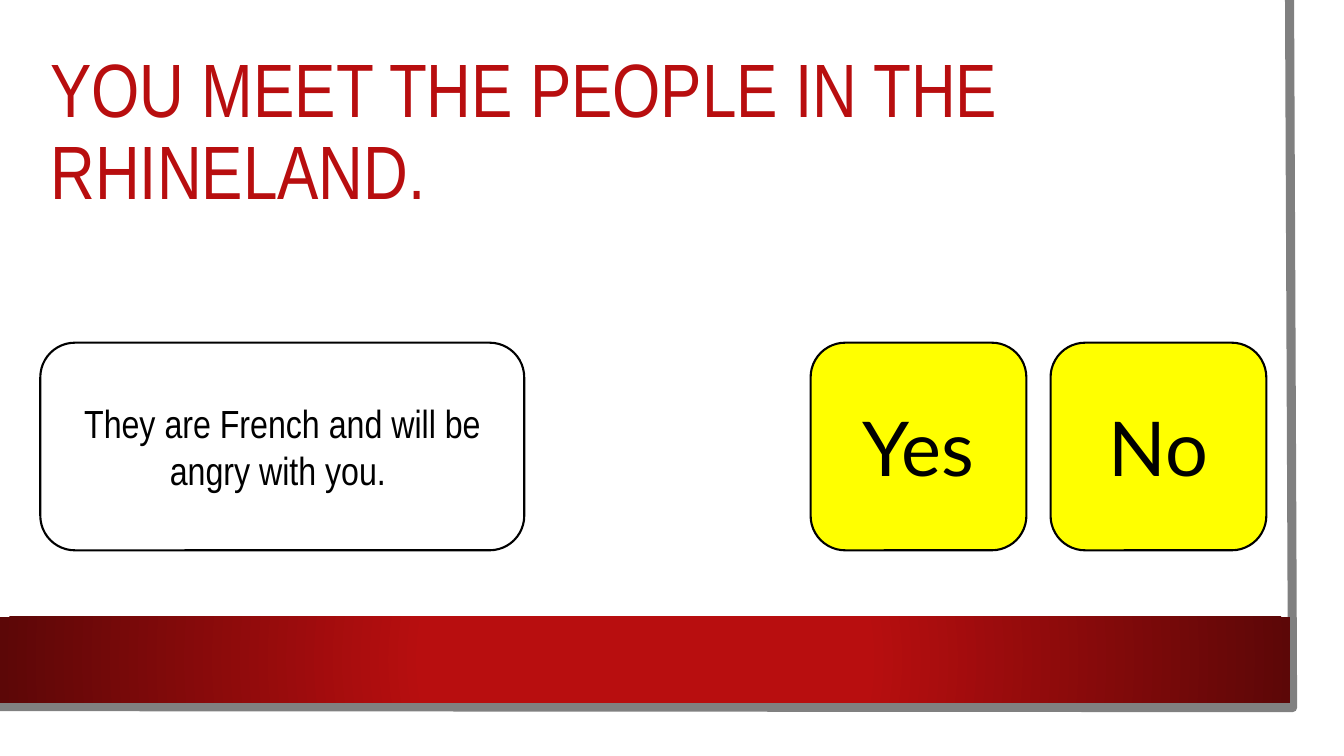
import pptx
import pptx.dml.color
import pptx.enum.dml
import pptx.enum.shapes
import pptx.enum.text
import pptx.util
from lxml import etree
from pptx.oxml.ns import qn

Inches, Pt = pptx.util.Inches, pptx.util.Pt
RGB = pptx.dml.color.RGBColor.from_string
SHAPE = pptx.enum.shapes.MSO_SHAPE
ALIGN = pptx.enum.text.PP_ALIGN
MIDDLE = pptx.enum.text.MSO_ANCHOR.MIDDLE

THEME = {
    "red": "B80E0F", "dark_red": "5C0707", "grey": "808080",
    "white": "FFFFFF", "yellow": "FFFF00", "black": "000000",
    "narrow": "Arial Narrow", "button": "Lato", "large": 54, "body": 28,
}

TITLE = "YOU MEET THE PEOPLE IN THE RHINELAND."
CARD_TOP, CARD_HEIGHT = 3.4, 2.06
# text, left, width, fill, font, size
CARDS = [
    ("They are French and will be angry with you. ", 0.4, 4.8, "white", "narrow", "body"),
    ("Yes", 8.04, 2.14, "yellow", "button", "large"),
    ("No", 10.42, 2.14, "yellow", "button", "large"),
]
PAGE_EDGE = [(12.79, 0), (12.82, 7.02), (-0.03, 7.01)]
BAND = (0, 6.12, 12.8, 0.85)


def format_text(sp, align, color, font, size):
    tf = sp.text_frame
    tf.word_wrap = True
    tf.auto_size = pptx.enum.text.MSO_AUTO_SIZE.NONE
    tf.vertical_anchor = MIDDLE
    p = tf.paragraphs[0]
    p.alignment = align
    for r in p.runs:
        r.font.name = THEME[font]
        r.font.size = Pt(THEME[size])
        r.font.color.rgb = RGB(THEME[color])
    return p


def add_page_edge(slide):
    points = [(Inches(x), Inches(y)) for x, y in PAGE_EDGE]
    builder = slide.shapes.build_freeform(*points[0], scale=1.0)
    builder.add_line_segments(points[1:], close=False)
    sp = builder.convert_to_shape()
    sp.shadow.inherit = False
    sp.fill.background()
    sp.line.color.rgb = RGB(THEME["grey"])
    sp.line.width = Pt(6.5)


def add_band(slide):
    """Add the red band, which darkens from its centre outwards."""
    sp = slide.shapes.add_shape(SHAPE.RECTANGLE, *map(Inches, BAND))
    sp.shadow.inherit = False
    sp.line.fill.background()
    sp.fill.gradient()
    stops = [(0.34, "red"), (1.0, "dark_red")]
    for stop, (position, color) in zip(sp.fill.gradient_stops, stops):
        stop.position = position
        stop.color.rgb = RGB(THEME[color])
    grad = sp.element.spPr.find(qn("a:gradFill"))
    lin = grad.find(qn("a:lin"))
    radial = etree.Element(qn("a:path"), {"path": "circle"})
    etree.SubElement(radial, qn("a:fillToRect"), dict.fromkeys("ltrb", "50000"))
    grad.replace(lin, radial)


def add_card(slide, text, left, width, fill, font, size):
    box = map(Inches, (left, CARD_TOP, width, CARD_HEIGHT))
    sp = slide.shapes.add_shape(SHAPE.ROUNDED_RECTANGLE, *box)
    sp.shadow.inherit = False
    sp.fill.solid()
    sp.fill.fore_color.rgb = RGB(THEME[fill])
    sp.line.color.rgb = RGB(THEME["black"])
    sp.line.width = Pt(1.5)
    sp.text_frame.text = text
    format_text(sp, ALIGN.CENTER, "black", font, size)


def main():
    prs = pptx.Presentation()
    prs.slide_width, prs.slide_height = Inches(13.33), Inches(7.5)
    slide = prs.slides.add_slide(prs.slide_layouts[5])

    title = slide.shapes.title
    title.left, title.top = Inches(0.4), Inches(0.7)
    title.width, title.height = Inches(12.28), Inches(1.26)
    title.text_frame.text = TITLE
    format_text(title, ALIGN.LEFT, "red", "narrow", "large").line_spacing = 0.9

    add_page_edge(slide)
    add_band(slide)
    for card in CARDS:
        add_card(slide, *card)
    prs.save("out.pptx")


if __name__ == "__main__":
    main()
